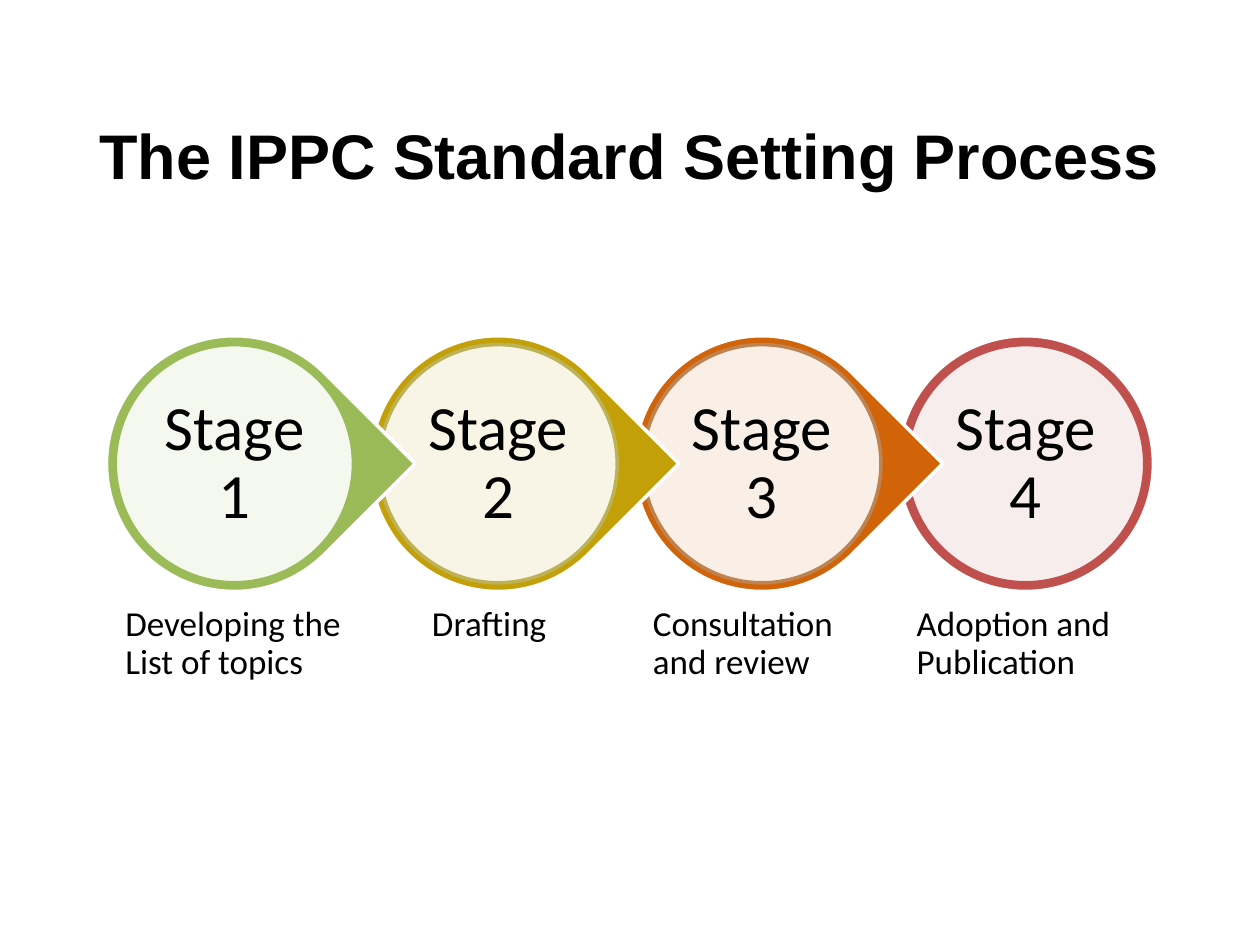
"""Build the slide showing the four stages of the standard setting process."""
from lxml.etree import SubElement
from pptx import Presentation
from pptx.dml.color import RGBColor
from pptx.enum.shapes import MSO_SHAPE as Shape
from pptx.enum.text import MSO_ANCHOR as Anchor, PP_ALIGN as Align
from pptx.oxml.ns import qn
from pptx.util import Inches, Pt

TITLE = "The IPPC Standard Setting Process"
STAGES = [
    {"name": "Stage 1", "caption": "Developing the List of topics", "color": "9BBB59", "ring": "9BBB59"},
    {"name": "Stage 2", "caption": "Drafting", "color": "C4A008", "ring": "BDB255", "indent": 0.34},
    {"name": "Stage 3", "caption": "Consultation and review", "color": "D16309", "ring": "BE8351"},
    {"name": "Stage 4", "caption": "Adoption and Publication", "color": "C0504D", "ring": "C0504D"},
]
FIRST_CENTER, LAST_CENTER, MIDDLE = 1.86, 8.14, 3.68
OUTER, INNER = 2.03, 1.89
CAPTION_TOP, CAPTION_HEIGHT = 4.73, 1.11


def rgb(value):
    return RGBColor.from_string(value)


def write(shape, text, size, font="Calibri", bold=False, align=Align.LEFT,
          anchor=Anchor.TOP, inset=0.08):
    frame = shape.text_frame
    frame.word_wrap = True
    frame.vertical_anchor = anchor
    frame.margin_left = frame.margin_right = Inches(inset)
    frame.margin_top = frame.margin_bottom = Inches(inset)
    paragraph = frame.paragraphs[0]
    paragraph.alignment = align
    paragraph.line_spacing = 0.9
    run = paragraph.add_run()
    run.text = text
    run.font.name = font
    run.font.size = Pt(size)
    run.font.bold = bold
    run.font.color.rgb = rgb("000000")


def add_round(slide, kind, center, diameter, fill, line, opacity=100):
    left, top = center - diameter / 2, MIDDLE - diameter / 2
    shape = slide.shapes.add_shape(
        kind, Inches(left), Inches(top), Inches(diameter), Inches(diameter))
    shape.shadow.inherit = False
    shape.fill.solid()
    shape.fill.fore_color.rgb = rgb(fill)
    shape.line.color.rgb = rgb(line)
    shape.line.width = Pt(2)
    if opacity < 100:
        color = shape.fill._xPr.find(qn("a:solidFill"))[0]
        SubElement(color, qn("a:alpha")).set("val", str(opacity * 1000))
    return shape


def add_stage(slide, stage, center, is_last):
    kind = Shape.OVAL if is_last else Shape.TEAR
    marker = add_round(slide, kind, center, OUTER, stage["color"], "FFFFFF")
    marker.rotation = 0 if is_last else 45
    disc = add_round(slide, Shape.OVAL, center, INNER, "FFFFFF", stage["ring"], opacity=90)
    write(disc, stage["name"], 36, align=Align.CENTER, anchor=Anchor.MIDDLE, inset=0.05)
    left = center - INNER / 2 + stage.get("indent", 0)
    caption = slide.shapes.add_textbox(
        Inches(left), Inches(CAPTION_TOP), Inches(INNER), Inches(CAPTION_HEIGHT))
    write(caption, stage["caption"], 20)


def main():
    presentation = Presentation()
    presentation.slide_width, presentation.slide_height = Inches(10), Inches(7.5)
    slide = presentation.slides.add_slide(presentation.slide_layouts[6])
    last = len(STAGES) - 1
    pitch = (LAST_CENTER - FIRST_CENTER) / last
    for index, stage in reversed(list(enumerate(STAGES))):
        add_stage(slide, stage, FIRST_CENTER + index * pitch, index == last)
    title = slide.shapes.add_textbox(Inches(0.69), Inches(0.67), Inches(8.62), Inches(1.18))
    write(title, TITLE, 36, font="Arial", bold=True, anchor=Anchor.MIDDLE, inset=0.1)
    presentation.save("out.pptx")


if __name__ == "__main__":
    main()
